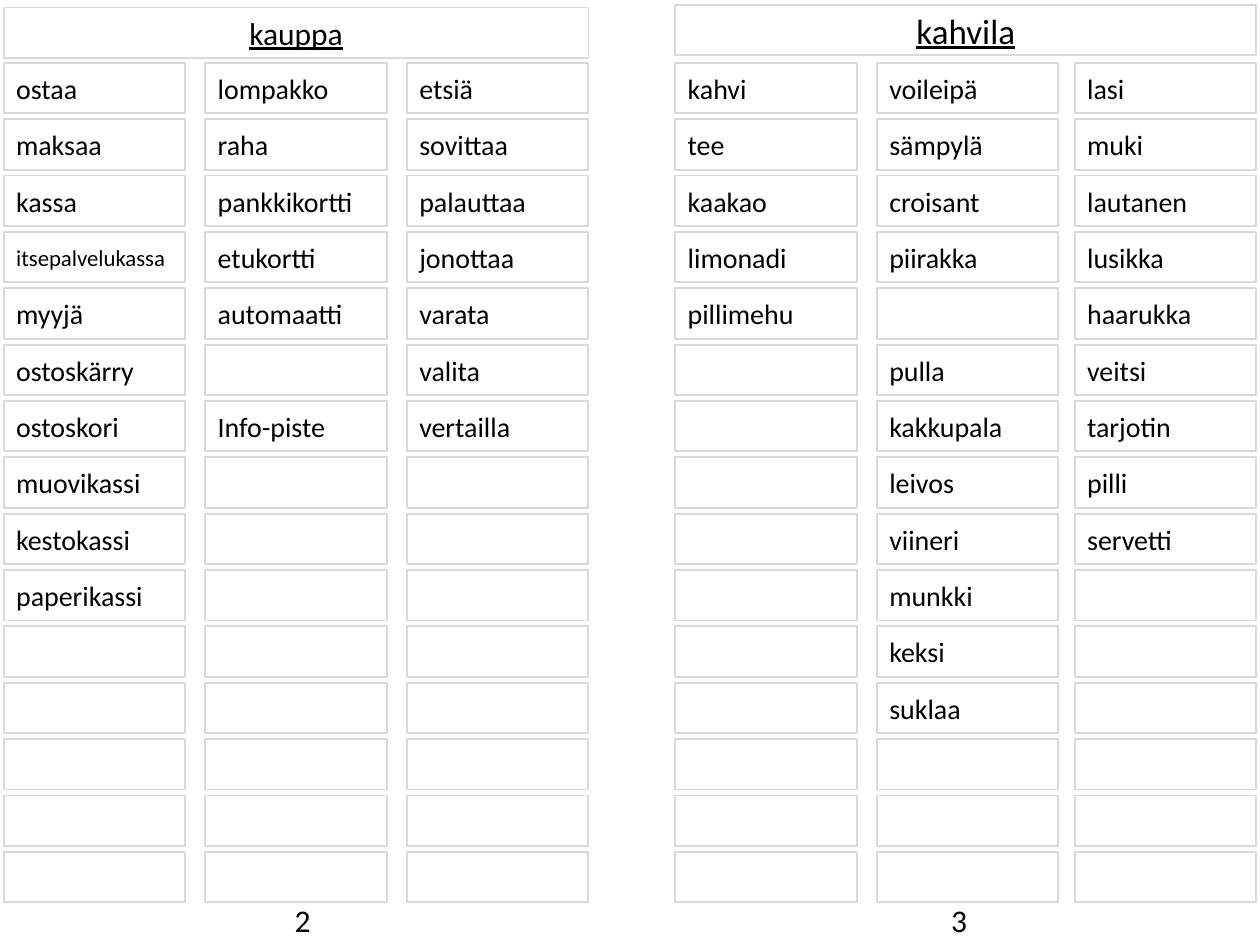
from pptx import Presentation
from pptx.dml.color import RGBColor
from pptx.enum.shapes import MSO_SHAPE
from pptx.enum.text import MSO_ANCHOR, MSO_AUTO_SIZE, PP_ALIGN
from pptx.util import Inches, Pt

RECTANGLE = MSO_SHAPE.RECTANGLE
MIDDLE = MSO_ANCHOR.MIDDLE
NO_AUTOFIT = MSO_AUTO_SIZE.NONE
LEFT, CENTER = PP_ALIGN.LEFT, PP_ALIGN.CENTER
BLACK = RGBColor(0x00, 0x00, 0x00)
GREY = RGBColor(0xD9, 0xD9, 0xD9)

ROWS = 15
CELL_WIDTH, CELL_HEIGHT = 1.44, 0.4
FIRST_TOP, LAST_TOP = 0.5, 6.76
ROW_STEP = (LAST_TOP - FIRST_TOP) / (ROWS - 1)

# Words of each column, by its left edge; empty strings are blank cells
COLUMNS = {
    0.03: ["ostaa", "maksaa", "kassa", "itsepalvelukassa", "myyjä", "ostoskärry",
           "ostoskori", "muovikassi", "kestokassi", "paperikassi"],
    1.63: ["lompakko", "raha", "pankkikortti", "etukortti", "automaatti", "",
           "Info-piste"],
    3.23: ["etsiä", "sovittaa", "palauttaa", "jonottaa", "varata", "valita",
           "vertailla"],
    5.36: ["kahvi", "tee", "kaakao", "limonadi", "pillimehu"],
    6.96: ["voileipä", "sämpylä", "croisant", "piirakka", "", "pulla", "kakkupala",
           "leivos", "viineri", "munkki", "keksi", "suklaa"],
    8.53: ["lasi", "muki", "lautanen", "lusikka", "haarukka", "veitsi", "tarjotin",
           "pilli", "servetti"],
}


def write(box, text, size, align=LEFT, underline=None):
    para = box.text_frame.paragraphs[0]
    para.text = text
    para.alignment = align
    para.font.name = "Calibri"
    para.font.size = Pt(size)
    para.font.color.rgb = BLACK
    para.font.underline = underline


def outline(box):
    box.fill.background()
    box.line.color.rgb = GREY
    box.line.width = Pt(1)
    box.text_frame.vertical_anchor = MIDDLE
    box.text_frame.word_wrap = True


deck = Presentation()
deck.slide_width, deck.slide_height = Inches(10), Inches(7.5)
page = deck.slides.add_slide(deck.slide_layouts[5])

# Page numbers
for number, left, width in (("2", 2.24, 0.34), ("3", 7.45, 0.43)):
    box = page.shapes.add_textbox(Inches(left), Inches(7.1), Inches(width), Inches(0.4))
    box.text_frame.word_wrap = True
    write(box, number, 18)

# Headings
shop = page.shapes.title
shop.left, shop.top = Inches(0.03), Inches(0.06)
shop.width, shop.height = Inches(4.64), Inches(0.4)
shop.text_frame.auto_size = NO_AUTOFIT
outline(shop)
write(shop, "kauppa", 18, CENTER, True)

cafe = page.shapes.add_shape(RECTANGLE, Inches(5.36), Inches(0.04),
                             Inches(4.61), Inches(0.4))
cafe.shadow.inherit = False
outline(cafe)
write(cafe, "kahvila", 20, CENTER, True)

# Word cells
for left, words in COLUMNS.items():
    for row in range(ROWS):
        cell = page.shapes.add_shape(
            RECTANGLE, Inches(left), Inches(FIRST_TOP + row * ROW_STEP),
            Inches(CELL_WIDTH), Inches(CELL_HEIGHT))
        cell.shadow.inherit = False
        outline(cell)
        if row < len(words) and words[row]:
            # The longest word needs a smaller size to fit on one line
            write(cell, words[row], 13 if len(words[row]) > 12 else 16)

deck.save("out.pptx")
